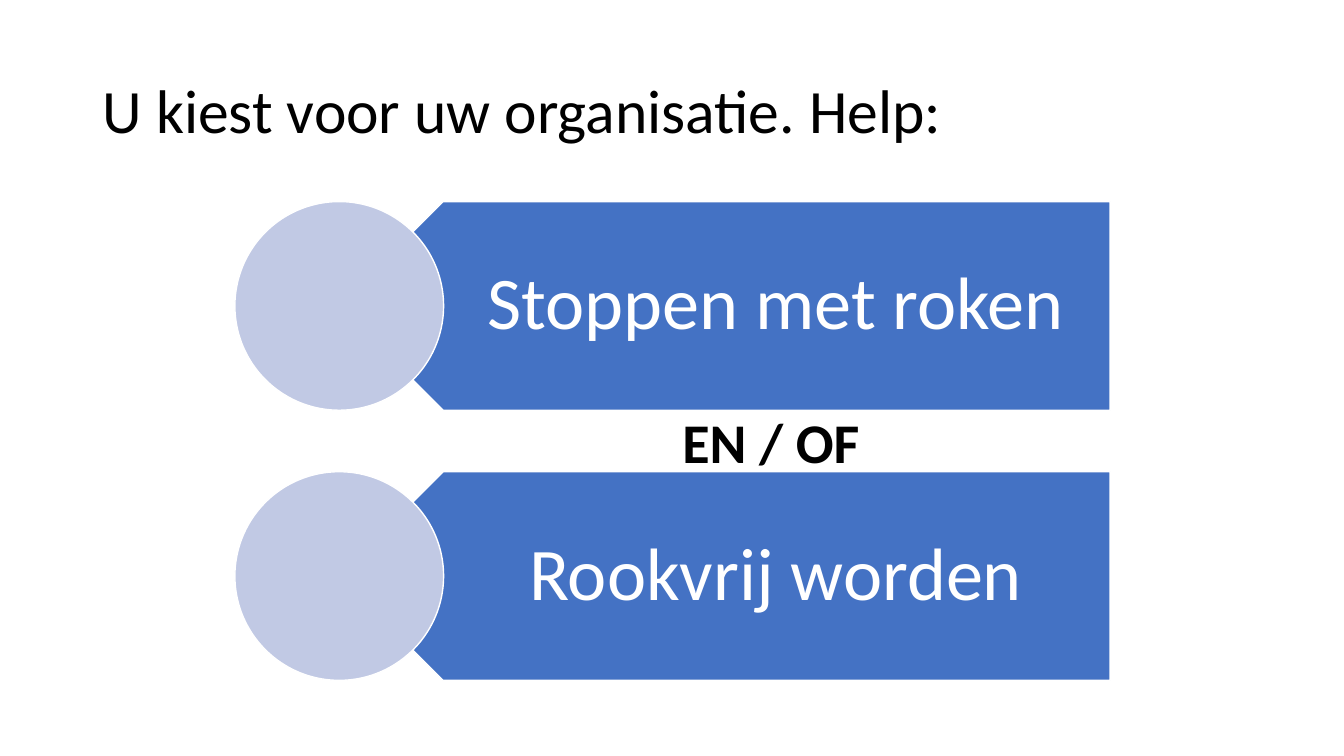
from dataclasses import dataclass

from pptx import Presentation
from pptx.dml.color import RGBColor
from pptx.enum import shapes, text
from pptx.util import Inches, Pt

WHITE = RGBColor(0xFF, 0xFF, 0xFF)
BLACK = RGBColor(0x00, 0x00, 0x00)
BLUE = RGBColor(0x44, 0x72, 0xC4)
PALE = RGBColor(0xC1, 0xC9, 0xE4)

TOP, STEP, SIZE = 2.0, 2.68, 2.07
CHOICES = ("Stoppen met roken", "Rookvrij worden")


@dataclass(frozen=True)
class Box:
    left: float
    top: float
    width: float
    height: float

    def emu(self) -> tuple:
        return tuple(map(Inches, (self.left, self.top, self.width, self.height)))


@dataclass(frozen=True)
class Label:
    words: str
    box: Box
    size: int
    color: RGBColor = BLACK
    bold: bool = False
    align: text.PP_ALIGN = text.PP_ALIGN.LEFT
    anchor: text.MSO_ANCHOR = text.MSO_ANCHOR.MIDDLE
    spacing: float = 0.9
    insets: tuple = (0.1, 0.05, 0.1, 0.05)


def apply(target, values: dict) -> None:
    for name, value in values.items():
        setattr(target, name, value)


def add_label(slide, label: Label) -> None:
    frame = slide.shapes.add_textbox(*label.box.emu()).text_frame
    sides = ("margin_left", "margin_top", "margin_right", "margin_bottom")
    apply(frame, dict(zip(sides, map(Inches, label.insets))))
    apply(frame, {"word_wrap": True, "vertical_anchor": label.anchor})
    para = frame.paragraphs[0]
    apply(para, {"alignment": label.align, "line_spacing": label.spacing})
    run = para.add_run()
    run.text = label.words
    apply(run.font, {"name": "Calibri", "size": Pt(label.size), "bold": label.bold})
    run.font.color.rgb = label.color


def add_form(slide, kind: shapes.MSO_SHAPE, box: Box, color: RGBColor, turn: int = 0) -> None:
    form = slide.shapes.add_shape(kind, *box.emu())
    form.rotation = turn
    form.shadow.inherit = False
    form.fill.solid()
    form.fill.fore_color.rgb = color
    form.line.color.rgb = WHITE
    form.line.width = Pt(1)


def add_choice(slide, words: str, top: float) -> None:
    """Draw one arrow banner with its text and the circle over its tip."""
    add_form(slide, shapes.MSO_SHAPE.PENTAGON, Box(3.36, top, 7.65, SIZE), BLUE, 180)
    add_label(slide, Label(words, Box(3.88, top, 7.13, SIZE), 53, WHITE,
                           align=text.PP_ALIGN.CENTER, insets=(0.91, 0.22, 0.41, 0.22)))
    add_form(slide, shapes.MSO_SHAPE.OVAL, Box(2.33, top, SIZE, SIZE), PALE)


def main() -> None:
    deck = Presentation()
    apply(deck, {"slide_width": Inches(13.33), "slide_height": Inches(7.5)})
    slide = deck.slides.add_slide(deck.slide_layouts[6])
    add_label(slide, Label("U kiest voor uw organisatie. Help:", Box(0.92, 0.4, 11.5, 1.45), 44))
    for row, words in enumerate(CHOICES):
        add_choice(slide, words, TOP + row * STEP)
    add_label(slide, Label("EN / OF", Box(6.67, 3.99, 3.25, 0.77), 40, bold=True,
                           anchor=text.MSO_ANCHOR.TOP, spacing=1.0))
    deck.save("out.pptx")


if __name__ == "__main__":
    main()
